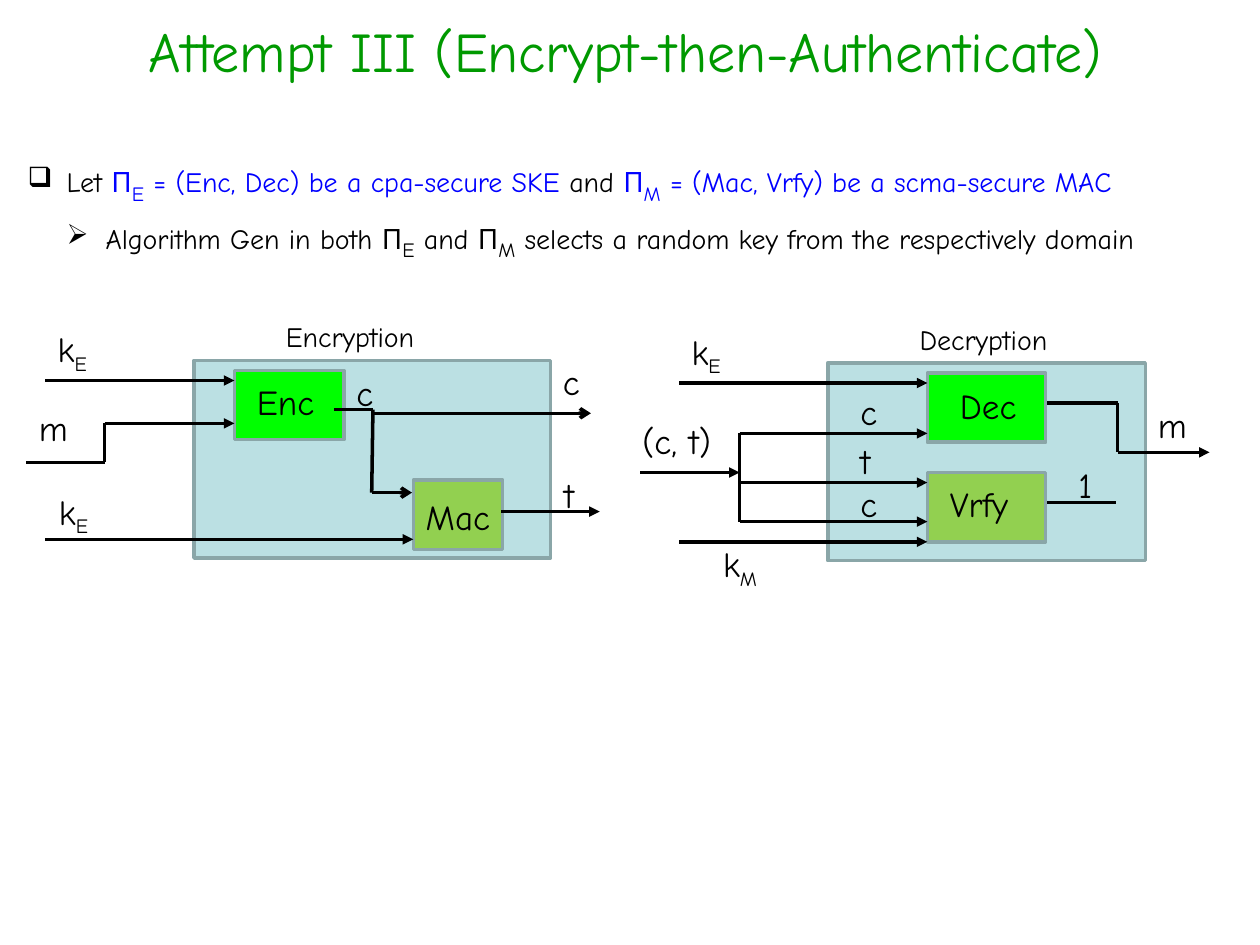
from dataclasses import dataclass
from itertools import pairwise

from lxml.etree import SubElement
from pptx import Presentation
from pptx.dml.color import RGBColor
from pptx.enum.shapes import MSO_CONNECTOR, MSO_SHAPE
from pptx.enum.text import MSO_ANCHOR, MSO_AUTO_SIZE, PP_ALIGN
from pptx.oxml.ns import qn
from pptx.util import Inches, Pt


@dataclass(frozen=True)
class Theme:
    """Colours, font and type sizes of the slide."""
    font: str = "Comic Neue"
    ink: str = "000000"
    title: str = "009900"
    accent: str = "0000FF"
    panel: str = "BBE0E3"
    cipher: str = "00FF00"
    authenticator: str = "92D050"
    border: str = "8AA6A8"
    title_size: int = 32
    label_size: int = 20
    body_size: int = 16
    line_width: int = 2


class SlideBuilder:
    """Draws styled elements on one slide."""

    def __init__(self, slide, theme):
        """Keep the slide and its theme."""
        self.slide = slide
        self.theme = theme

    def run(self, paragraph, text, size, color=None, subscript=False):
        """Add one formatted run to a paragraph."""
        run = paragraph.add_run()
        run.text = text
        run.font.name = self.theme.font
        run.font.size = Pt(size)
        run.font.color.rgb = RGBColor.from_string(color or self.theme.ink)
        if subscript:
            run.font._element.set("baseline", "-25000")

    def title(self, text, left, top, width, height):
        """Place and fill the title placeholder."""
        shape = self.slide.shapes.title
        shape.left, shape.top = Inches(left), Inches(top)
        shape.width, shape.height = Inches(width), Inches(height)
        frame = shape.text_frame
        frame.auto_size = MSO_AUTO_SIZE.NONE
        frame.vertical_anchor = MSO_ANCHOR.TOP
        frame.margin_top = Inches(0.08)
        paragraph = frame.paragraphs[0]
        paragraph.alignment = PP_ALIGN.CENTER
        self.run(paragraph, text, self.theme.title_size, self.theme.title)

    def text_box(self, left, top, width, height):
        """Add a wrapping text box and return its paragraph."""
        shape = self.slide.shapes.add_textbox(
            Inches(left), Inches(top), Inches(width), Inches(height))
        shape.text_frame.word_wrap = True
        shape.text_frame.auto_size = MSO_AUTO_SIZE.SHAPE_TO_FIT_TEXT
        return shape.text_frame.paragraphs[0]

    def label(self, text, left, top, width=0.7, subscript=""):
        """Add a diagram label with an optional subscript."""
        paragraph = self.text_box(left, top, width, 0.44)
        self.run(paragraph, text, self.theme.label_size)
        if subscript:
            self.run(paragraph, subscript, self.theme.label_size, subscript=True)

    def caption(self, text, left, top):
        """Add the name above a panel."""
        paragraph = self.text_box(left, top, 1.42, 0.37)
        self.run(paragraph, text, self.theme.body_size)

    def bullet(self, symbol, pieces, left, top, width):
        """Add a bulleted line from (text, color, subscript) pieces."""
        paragraph = self.text_box(left, top, width, 0.37)
        properties = paragraph._p.get_or_add_pPr()
        properties.set("marL", str(Inches(0.31)))
        properties.set("indent", str(Inches(-0.31)))
        SubElement(properties, qn("a:buChar")).set("char", symbol)
        for text, color, subscript in pieces:
            size = self.theme.label_size if subscript else self.theme.body_size
            self.run(paragraph, text, size, color, subscript)

    def box(self, fill, left, top, width, height):
        """Add a bordered rectangle."""
        shape = self.slide.shapes.add_shape(
            MSO_SHAPE.RECTANGLE, Inches(left), Inches(top), Inches(width), Inches(height))
        shape.shadow.inherit = False
        shape.fill.solid()
        shape.fill.fore_color.rgb = RGBColor.from_string(fill)
        shape.line.color.rgb = RGBColor.from_string(self.theme.border)
        shape.line.width = Pt(self.theme.line_width)

    def wire(self, *points, head="triangle"):
        """Join points with straight lines, with a head on the last one."""
        for start, end in pairwise(points):
            connector = self.slide.shapes.add_connector(
                MSO_CONNECTOR.STRAIGHT, *map(Inches, start + end))
            connector.line.color.rgb = RGBColor.from_string(self.theme.ink)
            connector.line.width = Pt(self.theme.line_width)
            if head and end == points[-1]:
                line = connector.line._get_or_add_ln()
                SubElement(line, qn("a:tailEnd")).set("type", head)
            SubElement(connector._element.spPr, qn("a:effectLst"))


def draw_statements(builder):
    """Write the two bulleted statements."""
    ink, accent = builder.theme.ink, builder.theme.accent
    builder.bullet("❑", [
        ("Let ", ink, False),
        ("Π", accent, False),
        ("E", accent, True),
        (" = (Enc, Dec) be a cpa-secure SKE ", accent, False),
        ("and ", ink, False),
        ("Π", accent, False),
        ("M", accent, True),
        (" = (Mac, Vrfy) be a scma-secure MAC", accent, False),
    ], 0.12, 1.2, 9.69)
    builder.bullet("➢", [
        ("Algorithm Gen in both Π", ink, False),
        ("E", ink, True),
        (" and Π", ink, False),
        ("M", ink, True),
        (" selects a random key from the respectively domain", ink, False),
    ], 0.43, 1.65, 9.37)


def draw_encryption(builder):
    """Draw the encryption diagram."""
    theme = builder.theme
    builder.box(theme.panel, 1.54, 2.86, 2.83, 1.57)
    builder.box(theme.cipher, 1.86, 2.94, 0.87, 0.55)
    builder.box(theme.authenticator, 3.28, 3.81, 0.71, 0.55)
    builder.wire((0.36, 3.02), (1.86, 3.02))
    builder.wire((0.21, 3.67), (0.83, 3.67), (0.83, 3.36), (1.86, 3.36))
    builder.wire((0.36, 4.28), (3.28, 4.28))
    builder.wire((2.65, 3.25), (2.96, 3.25), (2.95, 3.91), (3.27, 3.91), head="arrow")
    builder.wire((2.95, 3.28), (4.69, 3.28), head="arrow")
    builder.wire((3.98, 4.06), (4.76, 4.06))
    builder.caption("Encryption", 2.17, 2.49)
    builder.label("Enc", 1.94, 2.97, 1.02)
    builder.label("Mac", 3.28, 3.88, 1.02)
    builder.label("k", 0.36, 2.55, subscript="E")
    builder.label("k", 0.37, 3.84, subscript="E")
    for text, left, top in [("m", 0.21, 3.18), ("c", 2.73, 2.9),
                            ("c", 4.37, 2.81), ("t", 4.38, 3.71)]:
        builder.label(text, left, top, 0.46)


def draw_decryption(builder):
    """Draw the decryption diagram."""
    theme = builder.theme
    fork, block = 5.87, 7.36
    builder.box(theme.panel, 6.57, 2.88, 2.52, 1.57)
    builder.box(theme.cipher, block, 2.96, 0.94, 0.55)
    builder.box(theme.authenticator, block, 3.75, 0.94, 0.55)
    for start, y in [(5.39, 3.04), (fork, 3.44), (fork, 3.83), (fork, 4.14), (5.39, 4.3)]:
        builder.wire((start, y), (block, y))
    builder.wire((5.08, 3.75), (fork, 3.75))
    builder.wire((fork, 3.44), (fork, 4.14), head=None)
    builder.wire((8.31, 3.2), (8.87, 3.2), (8.87, 3.59), (9.09, 3.59), (9.6, 3.59))
    builder.wire((8.31, 3.99), (8.86, 3.99), head=None)
    builder.caption("Decryption", 7.2, 2.51)
    builder.label("Dec", 7.52, 3, 1.02)
    builder.label("Vrfy", 7.44, 3.78, 1.02)
    builder.label("k", 5.39, 2.57, subscript="E")
    builder.label("k", 5.64, 4.26, subscript="M")
    builder.label("(c, t)", 5, 3.28, 1.1)
    builder.label("m", 9.09, 3.15, 1.01)
    for text, left, top in [("c", 6.73, 3.05), ("t", 6.73, 3.44),
                            ("c", 6.73, 3.78), ("1", 8.46, 3.63)]:
        builder.label(text, left, top, 0.46)


def main():
    """Build and save the presentation."""
    presentation = Presentation()
    presentation.slide_width, presentation.slide_height = Inches(10), Inches(7.5)
    slide = presentation.slides.add_slide(presentation.slide_layouts[5])
    builder = SlideBuilder(slide, Theme())
    builder.title("Attempt III (Encrypt-then-Authenticate)", 0.2, 0.05, 9.53, 0.55)
    draw_statements(builder)
    draw_encryption(builder)
    draw_decryption(builder)
    presentation.save("out.pptx")


if __name__ == "__main__":
    main()
